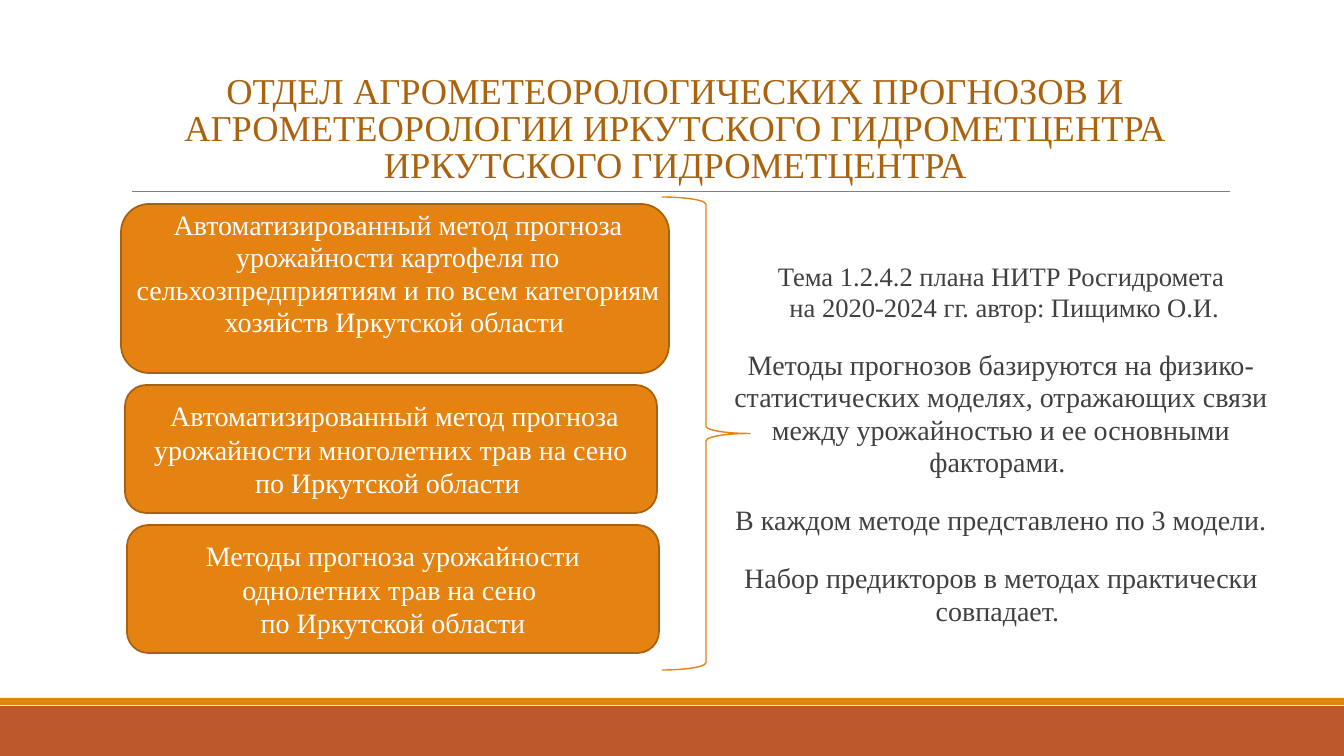
from lxml.etree import SubElement
from pptx import Presentation
from pptx.dml.color import RGBColor
from pptx.enum.shapes import MSO_CONNECTOR as Connector, MSO_SHAPE as Shape
from pptx.enum.text import MSO_ANCHOR as Anchor, PP_ALIGN as Align
from pptx.oxml.ns import qn
from pptx.util import Pt

ORANGE = RGBColor(0xE4, 0x83, 0x12)
BROWN = RGBColor(0xA9, 0x61, 0x0D)
TITLE_BROWN = RGBColor(0xAB, 0x62, 0x0D)
RUST = RGBColor(0xBD, 0x58, 0x2C)
GRAY = RGBColor(0x80, 0x80, 0x80)
DARK = RGBColor(0x40, 0x40, 0x40)
WHITE = RGBColor(0xFF, 0xFF, 0xFF)

PAGE_WIDTH, PAGE_HEIGHT = 1344, 756
CARD_WIDTH, CARD_HEIGHT = 532, 128
COLUMN_WIDTH = 544

TITLE = ("ОТДЕЛ АГРОМЕТЕОРОЛОГИЧЕСКИХ ПРОГНОЗОВ И АГРОМЕТЕОРОЛОГИИ "
         "ИРКУТСКОГО ГИДРОМЕТЦЕНТРА ИРКУТСКОГО ГИДРОМЕТЦЕНТРА")
POTATO = ("Автоматизированный метод прогноза урожайности картофеля по "
          "сельхозпредприятиям и по всем категориям хозяйств Иркутской области ")
PERENNIAL = [" Автоматизированный метод прогноза урожайности многолетних трав "
             "на сено по Иркутской области "]
ANNUAL = ["Методы прогноза урожайности однолетних трав на сено ",
          "по Иркутской области"]
THEME = "Тема 1.2.4.2 плана НИТР Росгидромета\n на 2020-2024 гг. автор: Пищимко О.И."
NOTES = ["Методы прогнозов базируются на физико-статистических моделях, отражающих "
         "связи между урожайностью и ее основными факторами. ",
         "В каждом методе представлено по 3 модели. ",
         "Набор предикторов в методах практически совпадает. "]


def px(*lengths):
    """Turn whole pixels into a list of EMU."""
    return [round(length * 12192000 / PAGE_WIDTH) for length in lengths]


class SlideBuilder:
    """Hold the text style and the current slide."""

    def __init__(self, page, font="Times New Roman", size=20):
        self.page, self.font, self.size = page, font, size

    def fill_text(self, frame, texts, color, size=None, spacing=1.0, after=0):
        """Fill a text frame with centred paragraphs."""
        frame.word_wrap = True
        for index, text in enumerate(texts):
            para = frame.add_paragraph() if index else frame.paragraphs[0]
            para.alignment = Align.CENTER
            para.line_spacing = spacing
            para.space_after = Pt(after)
            for number, line in enumerate(text.split("\n")):
                if number:
                    para.add_line_break()
                span = para.add_run()
                span.text = line
                span.font.name = self.font
                span.font.size = Pt(size or self.size)
                span.font.color.rgb = color

    def shape(self, kind, area, fill=None, line=None, weight=1.25):
        """Add a preset shape with flat fill and outline."""
        box = self.page.shapes.add_shape(kind, *px(*area))
        box.shadow.inherit = False
        if fill is None:
            box.fill.background()
        else:
            box.fill.solid()
            box.fill.fore_color.rgb = fill
        if line is None:
            box.line.fill.background()
        else:
            box.line.color.rgb = line
            box.line.width = Pt(weight)
        return box

    def card(self, area, texts=()):
        """Add an orange rounded card with white text."""
        box = self.shape(Shape.FLOWCHART_ALTERNATE_PROCESS, area, ORANGE, BROWN)
        box.text_frame.vertical_anchor = Anchor.MIDDLE
        self.fill_text(box.text_frame, texts, WHITE)

    def rule(self, left, right, top):
        """Add a thin horizontal line."""
        line = self.page.shapes.add_connector(Connector.STRAIGHT, *px(left, top, right, top))
        line.line.color.rgb = GRAY
        line.line.width = Pt(0.5)
        SubElement(line._element.spPr, qn("a:effectLst"))

    def text(self, area, texts, color, anchor=Anchor.TOP, insets=(10, 5, 10, 5), **style):
        """Add a text box."""
        frame = self.page.shapes.add_textbox(*px(*area)).text_frame
        frame.vertical_anchor = anchor
        (frame.margin_left, frame.margin_top,
         frame.margin_right, frame.margin_bottom) = px(*insets)
        self.fill_text(frame, texts, color, **style)


def main():
    """Build and save the slide."""
    deck = Presentation()
    deck.slide_width, deck.slide_height = px(PAGE_WIDTH, PAGE_HEIGHT)
    slide = SlideBuilder(deck.slides.add_slide(deck.slide_layouts[6]))

    slide.shape(Shape.RECTANGLE, (0, 706, PAGE_WIDTH, 50), RUST)
    slide.shape(Shape.RECTANGLE, (0, 698, PAGE_WIDTH, 7), ORANGE)
    slide.rule(132, 1230, 191)
    slide.text((121, 31, 1109, 160), [TITLE], TITLE_BROWN, Anchor.BOTTOM, size=26, spacing=0.85)

    slide.card((121, 204, 548, 169))
    slide.text((121, 204, COLUMN_WIDTH, 169), [POTATO], WHITE, insets=(10, 5, 0, 5), spacing=0.97)
    slide.card((125, 385, CARD_WIDTH, CARD_HEIGHT), PERENNIAL)
    slide.card((127, 525, CARD_WIDTH, CARD_HEIGHT), ANNUAL)
    slide.shape(Shape.RIGHT_BRACE, (662, 197, 88, 473), line=ORANGE, weight=1)

    column = {"insets": (10, 0, 0, 0), "spacing": 0.97, "after": 18}
    slide.text((724, 262, COLUMN_WIDTH, 64), [THEME], DARK, size=19, **column)
    slide.text((724, 349, COLUMN_WIDTH, 300), NOTES, DARK, **column)

    deck.save("out.pptx")


if __name__ == "__main__":
    main()
